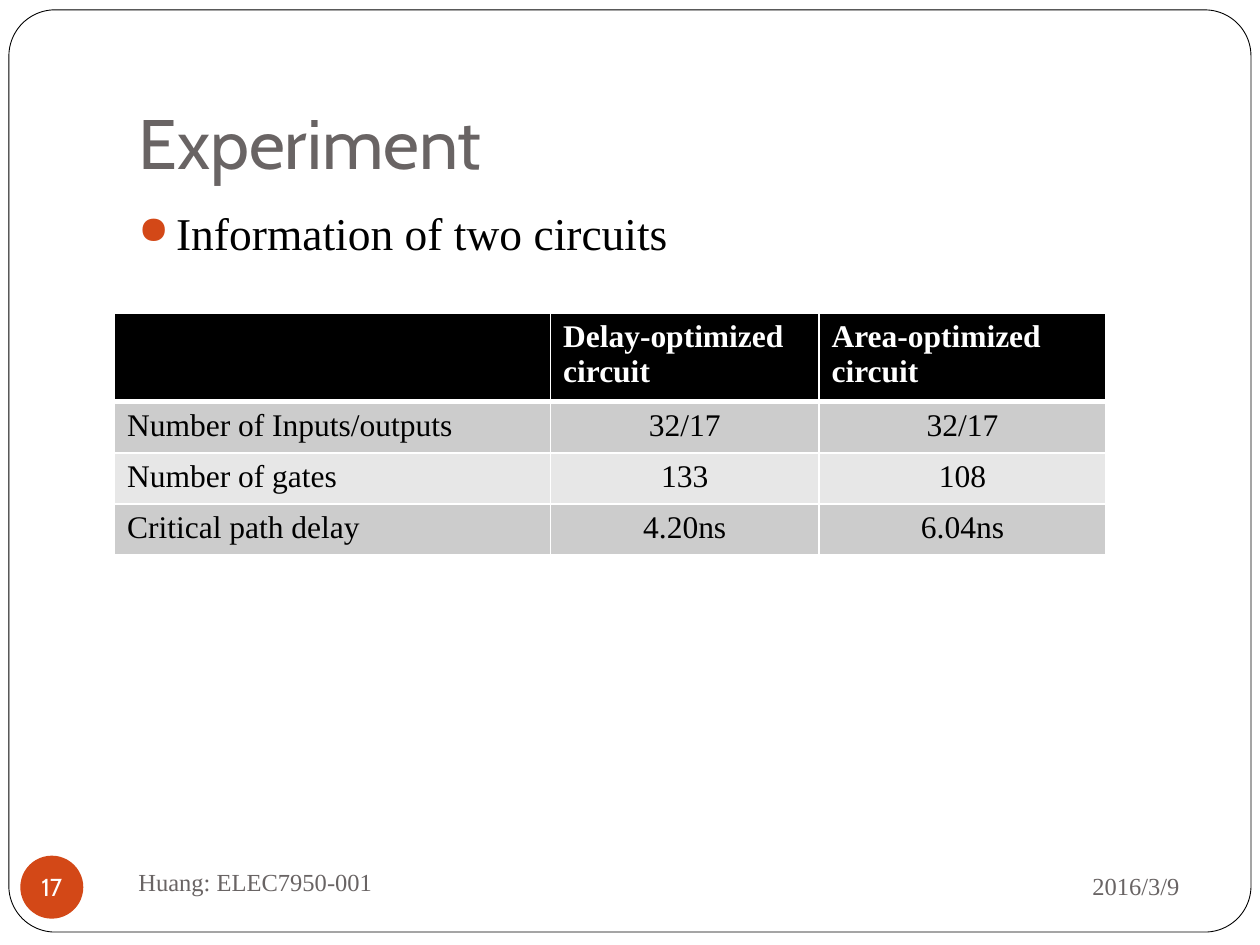
"""Build the experiment slide with a table comparing two circuits."""
from dataclasses import dataclass

from lxml import etree
from pptx import Presentation
from pptx import util as u
from pptx.dml.color import RGBColor
from pptx.enum import shapes, text
from pptx.oxml.ns import qn

BLACK = RGBColor(0x00, 0x00, 0x00)
WHITE = RGBColor(0xFF, 0xFF, 0xFF)
GRAY = RGBColor(0x69, 0x64, 0x64)
ORANGE = RGBColor(0xD3, 0x48, 0x17)
DARK_BAND = RGBColor(0xCC, 0xCC, 0xCC)
LIGHT_BAND = RGBColor(0xE7, 0xE7, 0xE7)
SERIF = "Times New Roman"
SANS = "Cabin"
LEFT, CENTER, RIGHT = text.PP_ALIGN.LEFT, text.PP_ALIGN.CENTER, text.PP_ALIGN.RIGHT
TOP, MIDDLE, BOTTOM = text.MSO_ANCHOR.TOP, text.MSO_ANCHOR.MIDDLE, text.MSO_ANCHOR.BOTTOM


@dataclass(frozen=True)
class Box:
    left: float
    top: float
    width: float
    height: float

    def lengths(self) -> tuple:
        return tuple(u.Cm(value) for value in (self.left, self.top, self.width, self.height))


@dataclass(frozen=True)
class Label:
    box: Box
    words: str
    size: float
    color: RGBColor = GRAY
    font: str = SERIF
    align: text.PP_ALIGN = LEFT
    anchor: text.MSO_ANCHOR = MIDDLE
    bottom_inset: float = 0.13


TITLE = Label(Box(2.54, 0.76, 21.59, 3.18), "Experiment", 40, font=SANS,
              anchor=BOTTOM, bottom_inset=0.25)
BODY = Label(Box(2.54, 4.01, 21.59, 12.7), "Information of two circuits", 26,
             color=BLACK, anchor=TOP)
DATE = Label(Box(17.15, 17.2, 6.88, 1.32), "2016/3/9", 14, align=RIGHT)
FOOTER = Label(Box(2.54, 17.15, 11, 1.27), "Huang: ELEC7950-001", 14)
FRAME = Box(0.18, 0.2, 25.04, 18.59)
BADGE = Box(0.41, 17.25, 1.27, 1.27)
TABLE = Box(2.31, 6.32, 19.99, 4.74)
COLUMN_WIDTHS = (8.79, 5.41, 5.79)
ROW_HEIGHTS = (1.65, 1.03, 1.03, 1.03)
ROWS = (
    ("", "Delay-optimized circuit", "Area-optimized circuit"),
    ("Number of Inputs/outputs", "32/17", "32/17"),
    ("Number of gates", "133", "108"),
    ("Critical path delay", "4.20ns", "6.04ns"),
)


def write(frame, words: str, *, size: float, color: RGBColor, font: str = SERIF,
          bold: bool = False, align: text.PP_ALIGN = LEFT):
    paragraph = frame.paragraphs[0]
    paragraph.alignment = align
    run = paragraph.add_run()
    run.text = words
    run.font.size = u.Pt(size)
    run.font.name = font
    run.font.bold = bold
    run.font.color.rgb = color
    return paragraph


def add_label(slide, label: Label):
    frame = slide.shapes.add_textbox(*label.box.lengths()).text_frame
    frame.word_wrap = True
    frame.vertical_anchor = label.anchor
    frame.margin_bottom = u.Cm(label.bottom_inset)
    return write(frame, label.words, size=label.size, color=label.color,
                 font=label.font, align=label.align)


def add_bullet(paragraph, color: RGBColor) -> None:
    paragraph.space_before = u.Pt(5.8)
    properties = paragraph._p.get_or_add_pPr()
    properties.set("marL", str(u.Cm(0.76)))
    properties.set("indent", str(-u.Cm(0.76)))
    bullet_color = etree.SubElement(properties, qn("a:buClr"))
    etree.SubElement(bullet_color, qn("a:srgbClr"), val=str(color))
    etree.SubElement(properties, qn("a:buSzPct"), val="85000")
    etree.SubElement(properties, qn("a:buChar"), char="●")


def add_preset(slide, kind: shapes.MSO_SHAPE, box: Box, fill: RGBColor):
    shape = slide.shapes.add_shape(kind, *box.lengths())
    shape.shadow.inherit = False
    shape.fill.solid()
    shape.fill.fore_color.rgb = fill
    shape.line.fill.background()
    return shape


def set_borders(cell, **points: float) -> None:
    properties = cell._tc.get_or_add_tcPr()
    for side in "LRTB":
        line = etree.SubElement(properties, qn(f"a:ln{side}"), w=str(u.Pt(points.get(side, 1))))
        fill = etree.SubElement(line, qn("a:solidFill"))
        etree.SubElement(fill, qn("a:srgbClr"), val=str(WHITE))


def add_circuit_table(slide) -> None:
    table = slide.shapes.add_table(len(ROWS), len(COLUMN_WIDTHS), *TABLE.lengths()).table
    for column, width in zip(table.columns, COLUMN_WIDTHS):
        column.width = u.Cm(width)
    for row, height in zip(table.rows, ROW_HEIGHTS):
        row.height = u.Cm(height)
    for row_index, row in enumerate(ROWS):
        header = row_index == 0
        band = BLACK if header else DARK_BAND if row_index % 2 else LIGHT_BAND
        for column_index, words in enumerate(row):
            cell = table.cell(row_index, column_index)
            set_borders(cell, T=3 if row_index == 1 else 1, B=3 if header else 1)
            cell.fill.solid()
            cell.fill.fore_color.rgb = band
            if words:
                write(cell.text_frame, words, size=18, bold=header,
                      color=WHITE if header else BLACK,
                      align=LEFT if header or column_index == 0 else CENTER)


def add_page_badge(slide) -> None:
    frame = add_preset(slide, shapes.MSO_SHAPE.OVAL, BADGE, ORANGE).text_frame
    frame.margin_left = frame.margin_right = frame.margin_top = frame.margin_bottom = 0
    frame.word_wrap = False
    frame.vertical_anchor = MIDDLE
    write(frame, "17", size=14, color=WHITE, font=SANS, align=CENTER)


def main() -> None:
    presentation = Presentation()
    presentation.slide_width, presentation.slide_height = u.Cm(25.4), u.Cm(19.05)
    slide = presentation.slides.add_slide(presentation.slide_layouts[6])
    frame = add_preset(slide, shapes.MSO_SHAPE.ROUNDED_RECTANGLE, FRAME, WHITE)
    frame.adjustments[0] = 0.05
    frame.line.color.rgb = BLACK
    frame.line.width = u.Pt(0.5)
    add_label(slide, TITLE)
    add_bullet(add_label(slide, BODY), ORANGE)
    add_circuit_table(slide)
    for label in (DATE, FOOTER):
        add_label(slide, label)
    add_page_badge(slide)
    presentation.save("out.pptx")


if __name__ == "__main__":
    main()
